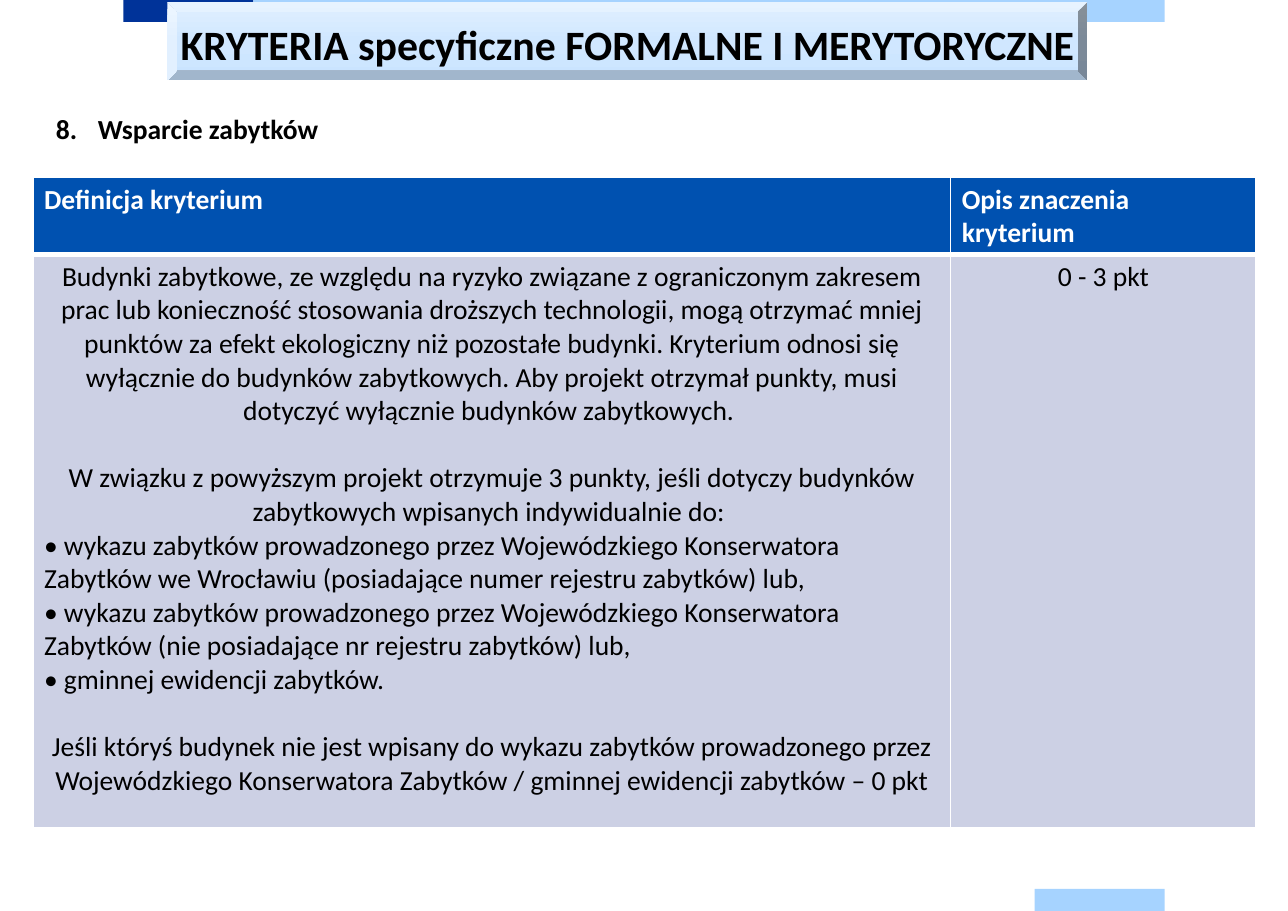
from copy import deepcopy
from dataclasses import dataclass

from lxml import etree
from pptx import Presentation
from pptx import util as u
from pptx.dml.color import RGBColor
from pptx.enum import shapes, text
from pptx.oxml import ns

PX = 9144  # EMU in one px, 100 px to the inch


@dataclass(frozen=True)
class Theme:
    font: str = "Calibri"
    title_size: float = 27.3
    body_size: float = 18
    line_height: float = 22
    black: str = "000000"
    white: str = "FFFFFF"
    navy: str = "003399"
    sky: str = "A6D3FF"
    header: str = "0051B0"
    cell: str = "CCD0E4"
    title_gradient: tuple = ((0, "E1F0FF"), (0.5, "D0E7FF"), (1, "CAE4FF"))


THEME = Theme()
LEFT, CENTER = text.PP_ALIGN.LEFT, text.PP_ALIGN.CENTER

DEFINITION = (
    ("Budynki zabytkowe, ze względu na ryzyko związane z ograniczonym zakresem prac lub "
     "konieczność stosowania droższych technologii, mogą otrzymać mniej punktów za efekt "
     "ekologiczny niż pozostałe budynki. Kryterium odnosi się wyłącznie do budynków "
     "zabytkowych. Aby projekt otrzymał punkty, musi dotyczyć wyłącznie budynków "
     "zabytkowych. ", CENTER, 0),
    ("W związku z powyższym projekt otrzymuje 3 punkty, jeśli dotyczy budynków zabytkowych "
     "wpisanych indywidualnie do: ", CENTER, THEME.line_height),
    ("• wykazu zabytków prowadzonego przez Wojewódzkiego Konserwatora Zabytków we Wrocławiu "
     "(posiadające numer rejestru zabytków) lub,", LEFT, 0),
    ("• wykazu zabytków prowadzonego przez Wojewódzkiego Konserwatora Zabytków "
     "(nie posiadające nr rejestru zabytków) lub,", LEFT, 0),
    ("• gminnej ewidencji zabytków.", LEFT, 0),
    ("Jeśli któryś budynek nie jest wpisany do wykazu zabytków prowadzonego przez "
     "Wojewódzkiego Konserwatora Zabytków / gminnej ewidencji zabytków – 0 pkt",
     CENTER, THEME.line_height),
)


def px(*lengths):
    return [u.Emu(length * PX) for length in lengths]


def write(paragraph, words, size=THEME.body_size, color=THEME.black, bold=False,
          align=LEFT, before=0, line_spacing=None):
    paragraph.alignment = align
    if before:
        paragraph.space_before = u.Pt(before)
    if line_spacing:
        paragraph.line_spacing = u.Pt(line_spacing)
    run = paragraph.add_run()
    run.text = words
    run.font.name = THEME.font
    run.font.size = u.Pt(size)
    run.font.bold = bold
    run.font.color.rgb = RGBColor.from_string(color)


def add_plain_shape(slide, kind, box):
    shape = slide.shapes.add_shape(kind, *px(*box))
    shape.shadow.inherit = False
    shape.line.fill.background()
    return shape


def add_bar(slide, box, color):
    bar = add_plain_shape(slide, shapes.MSO_SHAPE.RECTANGLE, box)
    bar.fill.solid()
    bar.fill.fore_color.rgb = RGBColor.from_string(color)


def fill_downwards(shape, stops):
    """Fill with a three-stop gradient running from top to bottom."""
    shape.fill.gradient()
    shape.fill.gradient_angle = 270
    stop_list = shape._element.spPr.find(".//" + ns.qn("a:gsLst"))
    stop_list.append(deepcopy(stop_list[-1]))
    for stop, (position, color) in zip(shape.fill.gradient_stops, stops):
        stop.position = position
        stop.color.rgb = RGBColor.from_string(color)


def add_title(slide, box, words):
    title = add_plain_shape(slide, shapes.MSO_SHAPE.BEVEL, box)
    fill_downwards(title, THEME.title_gradient)
    frame = title.text_frame
    frame.margin_left = frame.margin_right = frame.margin_top = frame.margin_bottom = 0
    frame.word_wrap = False
    frame.vertical_anchor = text.MSO_ANCHOR.MIDDLE
    write(frame.paragraphs[0], words, size=THEME.title_size, bold=True,
          align=CENTER, line_spacing=36)


def add_numbered_heading(slide, box, number, words):
    frame = slide.shapes.add_textbox(*px(*box)).text_frame
    frame.word_wrap = True
    paragraph = frame.paragraphs[0]
    properties = paragraph._p.get_or_add_pPr()
    indent = 38 * PX
    properties.set("marL", str(indent))
    properties.set("indent", str(-indent))
    etree.SubElement(properties, ns.qn("a:buFont"), typeface=THEME.font)
    etree.SubElement(properties, ns.qn("a:buAutoNum"),
                     type="arabicPeriod", startAt=str(number))
    write(paragraph, words, bold=True)


def style_cell(cell, color, top, bottom):
    """Give white borders, with top and bottom widths in points, and a fill."""
    properties = cell._tc.get_or_add_tcPr()
    for side, width in (("L", 1), ("R", 1), ("T", top), ("B", bottom)):
        line = etree.SubElement(properties, ns.qn(f"a:ln{side}"), w=str(u.Pt(width)))
        solid = etree.SubElement(line, ns.qn("a:solidFill"))
        etree.SubElement(solid, ns.qn("a:srgbClr"), val=THEME.white)
    cell.fill.solid()
    cell.fill.fore_color.rgb = RGBColor.from_string(color)


def add_criteria_table(slide, left, top, widths, heights, headers, contents):
    box = px(left, top, sum(widths), sum(heights))
    table = slide.shapes.add_table(len(heights), len(widths), *box).table
    for row, height in zip(table.rows, px(*heights)):
        row.height = height
    for column, width in zip(table.columns, px(*widths)):
        column.width = width
    for index, (header, content) in enumerate(zip(headers, contents)):
        header_cell, body_cell = table.cell(0, index), table.cell(1, index)
        style_cell(header_cell, THEME.header, top=1, bottom=3)
        write(header_cell.text_frame.paragraphs[0], header, color=THEME.white, bold=True)
        style_cell(body_cell, THEME.cell, top=3, bottom=1)
        frame = body_cell.text_frame
        for position, (words, align, before) in enumerate(content):
            paragraph = frame.add_paragraph() if position else frame.paragraphs[0]
            write(paragraph, words, align=align, before=before)


def main():
    presentation = Presentation()
    presentation.slide_width, presentation.slide_height = px(1169, 827)
    slide = presentation.slides.add_slide(presentation.slide_layouts[6])

    add_bar(slide, (112, 0, 118, 20), THEME.navy)
    add_bar(slide, (230, 0, 827, 20), THEME.sky)
    add_bar(slide, (939, 807, 118, 20), THEME.sky)
    add_title(slide, (152, 2, 835, 71), "KRYTERIA specyficzne FORMALNE I MERYTORYCZNE")
    add_numbered_heading(slide, (41, 97, 969, 40), 8, "Wsparcie zabytków")
    add_criteria_table(
        slide, 30, 161, widths=(833, 277), heights=(70, 520),
        headers=("Definicja kryterium", "Opis znaczenia kryterium"),
        contents=(DEFINITION, (("0 - 3 pkt", CENTER, 0),)),
    )
    presentation.save("out.pptx")


if __name__ == "__main__":
    main()
